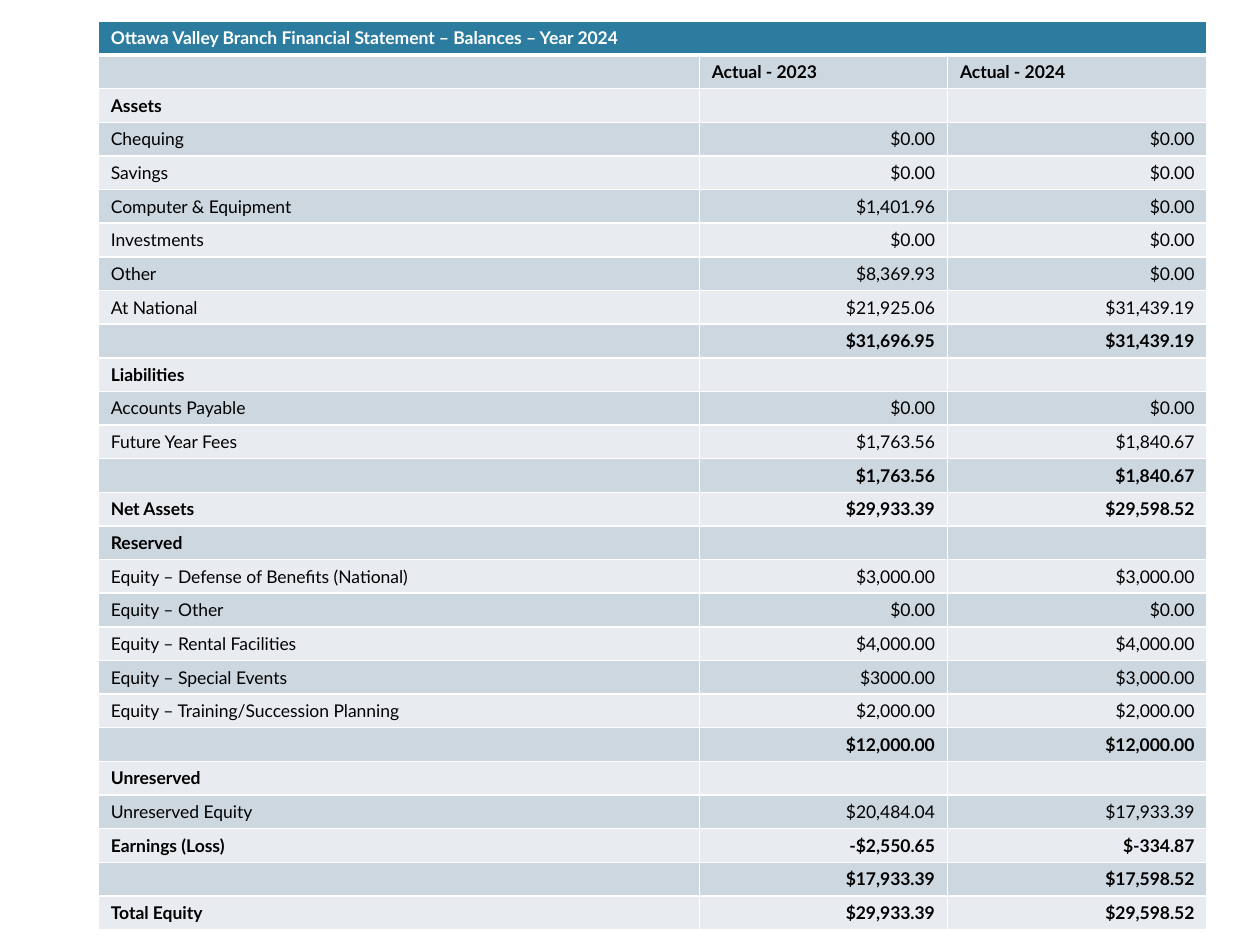
"""Build the Ottawa Valley Branch balance statement slide."""
import pptx
import pptx.dml.color
import pptx.enum.text
import pptx.oxml
import pptx.oxml.ns
import pptx.util

TITLE = "Ottawa Valley Branch Financial Statement – Balances – Year 2024"
HEADINGS = ("", "Actual - 2023", "Actual - 2024")
BALANCES = [
    ("Assets", "", ""),
    ("Chequing", "$0.00", "$0.00"),
    ("Savings", "$0.00", "$0.00"),
    ("Computer & Equipment", "$1,401.96", "$0.00"),
    ("Investments", "$0.00", "$0.00"),
    ("Other", "$8,369.93", "$0.00"),
    ("At National", "$21,925.06", "$31,439.19"),
    ("", "$31,696.95", "$31,439.19"),
    ("Liabilities", "", ""),
    ("Accounts Payable", "$0.00", "$0.00"),
    ("Future Year Fees", "$1,763.56", "$1,840.67"),
    ("", "$1,763.56", "$1,840.67"),
    ("Net Assets", "$29,933.39", "$29,598.52"),
    ("Reserved", "", ""),
    ("Equity – Defense of Benefits (National)", "$3,000.00", "$3,000.00"),
    ("Equity – Other", "$0.00", "$0.00"),
    ("Equity – Rental Facilities", "$4,000.00", "$4,000.00"),
    ("Equity – Special Events", "$3000.00", "$3,000.00"),
    ("Equity – Training/Succession Planning", "$2,000.00", "$2,000.00"),
    ("", "$12,000.00", "$12,000.00"),
    ("Unreserved", "", ""),
    ("Unreserved Equity", "$20,484.04", "$17,933.39"),
    ("Earnings (Loss)", "-$2,550.65", "$-334.87"),
    ("", "$17,933.39", "$17,598.52"),
    ("Total Equity", "$29,933.39", "$29,598.52"),
]
RESULT_LABELS = {"Net Assets", "Earnings (Loss)", "Total Equity"}
COLUMN_WIDTHS = (4.77, 1.97, 2.06)
LEFT, TOP, HEIGHT = 0.78, 0.17, 7.2
THEME = {
    "font": "Lato", "size": 10, "title_fill": "2C7C9F", "title_text": "FFFFFF",
    "bands": ("E8ECF0", "CDD7DF"), "text": "000000", "border": "FFFFFF",
    "rule": 1, "title_rule": 3,
}

Inches, Pt = pptx.util.Inches, pptx.util.Pt


def rgb(value):
    return pptx.dml.color.RGBColor.from_string(value)


def set_borders(cell, top, bottom):
    widths = {"lnL": THEME["rule"], "lnR": THEME["rule"], "lnT": top, "lnB": bottom}
    for side, width in widths.items():
        cell._tc.get_or_add_tcPr().append(pptx.oxml.parse_xml(
            f'<a:{side} {pptx.oxml.ns.nsdecls("a")} w="{Pt(width)}"><a:solidFill>'
            f'<a:srgbClr val="{THEME["border"]}"/></a:solidFill></a:{side}>'))


def is_bold(row):
    label, *values = row
    return not label or not any(values) or label in RESULT_LABELS


def fill_cell(cell, text, fill, color, bold, right):
    cell.fill.solid()
    cell.fill.fore_color.rgb = rgb(fill)
    cell.vertical_anchor = pptx.enum.text.MSO_ANCHOR.MIDDLE
    p = cell.text_frame.paragraphs[0]
    if text:
        p.text = text
    else:
        p._p.get_or_add_endParaRPr().set("sz", str(THEME["size"] * 100))
    p.alignment = pptx.enum.text.PP_ALIGN.RIGHT if right else pptx.enum.text.PP_ALIGN.LEFT
    p.font.name, p.font.size, p.font.bold = THEME["font"], Pt(THEME["size"]), bold
    p.font.color.rgb = rgb(color)


def main():
    prs = pptx.Presentation()
    prs.slide_width, prs.slide_height = Inches(10), Inches(7.5)
    s = prs.slides.add_slide(prs.slide_layouts[6])
    rows = [(TITLE, "", ""), HEADINGS, *BALANCES]
    table = s.shapes.add_table(
        len(rows), len(COLUMN_WIDTHS), Inches(LEFT), Inches(TOP),
        Inches(sum(COLUMN_WIDTHS)), Inches(HEIGHT)).table
    table.first_row = table.horz_banding = False
    for column, width in zip(table.columns, COLUMN_WIDTHS):
        column.width = Inches(width)
    for i, row in enumerate(rows):
        top = THEME["title_rule"] if i == 1 else THEME["rule"]
        bottom = THEME["title_rule"] if i == 0 else THEME["rule"]
        fill = THEME["bands"][i % 2] if i else THEME["title_fill"]
        color = THEME["text"] if i else THEME["title_text"]
        for j, text in enumerate(row):
            cell = table.cell(i, j)
            set_borders(cell, top, bottom)
            fill_cell(cell, text, fill, color, is_bold(row), i > 1 and j > 0)
    table.cell(0, 0).merge(table.cell(0, len(COLUMN_WIDTHS) - 1))
    prs.save("out.pptx")


if __name__ == "__main__":
    main()
